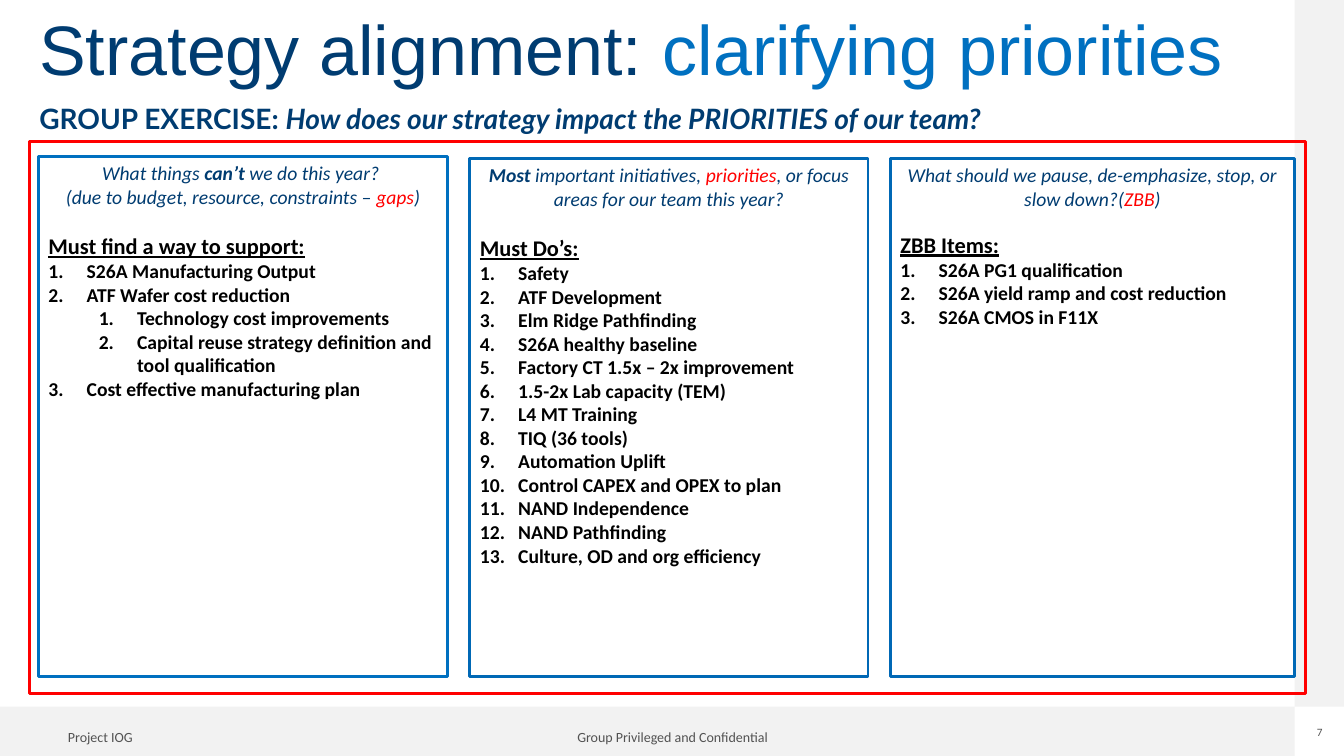
"""Build the strategy alignment slide with three priority columns."""
import pptx
import pptx.util
import pptx.dml.color
import pptx.enum.text
import pptx.enum.shapes
import pptx.oxml.ns
import lxml.etree

WIDE, HIGH = 13.33, 7.5
EDGE, BASE = 12.84, 7.01
NAVY, BLUE, RED, GREY, PALE = "003C71", "0070C0", "FF0000", "525252", "F2F2F2"
INK, DEEP, WHITE = "000000", "0068B5", "FFFFFF"

TITLE = [("Strategy alignment: ", NAVY, ""), ("clarifying priorities", BLUE, "")]
TASK = [("GROUP EXERCISE: ", NAVY, "b"),
        ("How does our strategy impact the PRIORITIES of our team?", NAVY, "bi")]

COLUMNS = [
    {"box": (0.38, 1.55, 4.06, 5.16), "edge": BLUE, "gap": 17,
     "ask": [[("What things", NAVY, "i"), (" can’t ", NAVY, "bi"),
              ("we do this year? ", NAVY, "i")],
             [("(due to budget, resource, constraints – ", NAVY, "i"),
              ("gaps", RED, "i"), (")", NAVY, "i")]],
     "head": "Must find a way to support:",
     "list": [(0, "S26A Manufacturing Output"),
              (0, "ATF Wafer cost reduction"),
              (1, "Technology cost improvements"),
              (1, "Capital reuse strategy definition and tool qualification"),
              (0, "Cost effective manufacturing plan")]},
    {"box": (4.66, 1.57, 3.95, 5.14), "edge": DEEP, "gap": 17,
     "ask": [[("Most", NAVY, "bi"), (" important initiatives, ", NAVY, "i"),
              ("priorities", RED, "i"),
              (", or focus areas for our team this year?", NAVY, "i")]],
     "head": "Must Do’s:",
     "list": [(0, "Safety"), (0, "ATF Development"),
              (0, "Elm Ridge Pathfinding"), (0, "S26A healthy baseline"),
              (0, "Factory CT 1.5x – 2x improvement"),
              (0, "1.5-2x Lab capacity (TEM)"), (0, "L4 MT Training"),
              (0, "TIQ (36 tools)"), (0, "Automation Uplift"),
              (0, "Control CAPEX and OPEX to plan"),
              (0, "NAND Independence"), (0, "NAND Pathfinding"),
              (0, "Culture, OD and org efficiency")]},
    {"box": (8.83, 1.57, 4.01, 5.14), "edge": DEEP, "gap": 14.6,
     "ask": [[("What should we pause, de-emphasize, stop, or slow down?(", NAVY, "i"),
              ("ZBB", RED, "i"), (")", NAVY, "i")]],
     "head": "ZBB Items:",
     "list": [(0, "S26A PG1 qualification"),
              (0, "S26A yield ramp and cost reduction"),
              (0, "S26A CMOS in F11X")]},
]

FOOT = [("Project IOG", (0.53, 7.18, 0.93, 0.25), 10),
        ("Group Privileged and Confidential", (5.55, 7.18, 2.24, 0.25), 10),
        ("7", (13.02, 7.2, 0.14, 0.13), 8)]
BANDS = [(0, BASE, EDGE, HIGH - BASE), (EDGE, 0, WIDE - EDGE, BASE)]
FRAME = (0.29, 1.4, 12.66, 5.48)

ALIGN = pptx.enum.text.PP_ALIGN
RECT = pptx.enum.shapes.MSO_SHAPE.RECTANGLE


def paint(code):
    return pptx.dml.color.RGBColor.from_string(code)


def inches(box):
    return [pptx.util.Inches(n) for n in box]


def place(shape, box):
    shape.left, shape.top, shape.width, shape.height = inches(box)


def outline(shape, code, size):
    shape.line.color.rgb = paint(code)
    shape.line.width = pptx.util.Pt(size)


def setup(shape, wrap=True):
    frame = shape.text_frame
    frame.word_wrap = wrap
    frame.auto_size = pptx.enum.text.MSO_AUTO_SIZE.NONE
    frame.vertical_anchor = pptx.enum.text.MSO_ANCHOR.TOP
    return frame


def write(para, runs, size, font="Calibri", align=ALIGN.LEFT, gap=0):
    para.alignment = align
    para.space_before = pptx.util.Pt(gap)
    para.space_after = pptx.util.Pt(0)
    for text, code, style in runs:
        run = para.add_run()
        run.text = text
        face = run.font
        face.name, face.size = font, pptx.util.Pt(size)
        face.color.rgb = paint(code)
        face.bold, face.italic = "b" in style, "i" in style
        face.underline = "u" in style


def mark(para, level=None):
    props = para._p.get_or_add_pPr()
    left, hang = (0, 0) if level is None else (0.38 + level / 2, -0.38)
    props.set("marL", str(int(pptx.util.Inches(left))))
    props.set("indent", str(int(pptx.util.Inches(hang))))
    tag = "a:buNone" if level is None else "a:buAutoNum"
    bullet = lxml.etree.SubElement(props, pptx.oxml.ns.qn(tag))
    if level is not None:
        para.level = level
        bullet.set("type", "arabicPeriod")


def fill_column(shape, col):
    place(shape, col["box"])
    shape.fill.solid()
    shape.fill.fore_color.rgb = paint(WHITE)
    outline(shape, col["edge"], 2)
    frame = setup(shape)
    rows = [(runs, 14, ALIGN.CENTER, 0, None) for runs in col["ask"]]
    rows.append(([(col["head"], INK, "bu")], 16, ALIGN.LEFT, col["gap"], None))
    rows += [([(text, INK, "b")], 14, ALIGN.LEFT, 0, level)
             for level, text in col["list"]]
    for n, (runs, size, align, gap, level) in enumerate(rows):
        para = frame.add_paragraph() if n else frame.paragraphs[0]
        write(para, runs, size, align=align, gap=gap)
        mark(para, level)


def main():
    deck = pptx.Presentation()
    deck.slide_width, deck.slide_height = inches((WIDE, HIGH))
    slide = deck.slides.add_slide(deck.slide_layouts[4])
    shapes = slide.shapes
    title, task, *bodies = slide.placeholders

    for box in BANDS:
        band = shapes.add_shape(RECT, *inches(box))
        band.shadow.inherit = False
        band.fill.solid()
        band.fill.fore_color.rgb = paint(PALE)
        band.line.fill.background()
        shapes._spTree.insert(2, band._element)

    place(title, (0.29, 0, 12, 1.25))
    write(setup(title).paragraphs[0], TITLE, 50, "Arial")
    place(task, (0.29, 0.96, 9.59, 0.44))
    para = setup(task).paragraphs[0]
    write(para, TASK, 20, "Lato")
    mark(para)
    for body, col in zip(bodies, COLUMNS):
        fill_column(body, col)

    border = shapes.add_shape(RECT, *inches(FRAME))
    border.shadow.inherit = False
    border.fill.background()
    outline(border, RED, 2.25)

    for text, box, size in FOOT:
        note = shapes.add_textbox(*inches(box))
        frame = setup(note, False)
        if size == 8:
            frame.margin_left = frame.margin_right = 0
            frame.margin_top = frame.margin_bottom = 0
        write(frame.paragraphs[0], [(text, GREY, "")], size, align=ALIGN.CENTER)

    deck.save("out.pptx")


if __name__ == "__main__":
    main()
